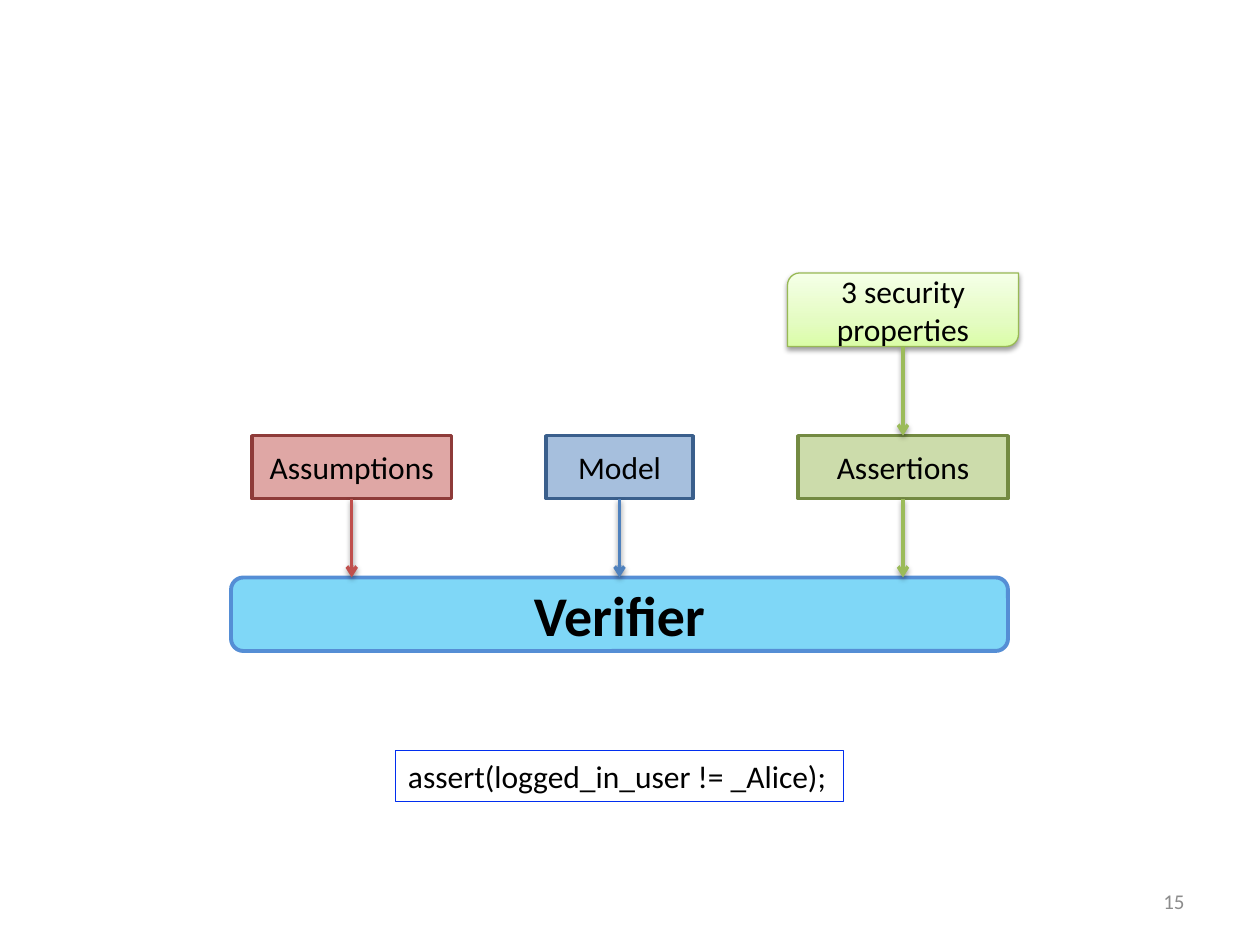
"""Build the verifier diagram slide: three inputs feeding one verifier."""
from lxml import etree
from pptx import Presentation
from pptx.dml import color
from pptx.enum import shapes, text
from pptx.oxml import ns
from pptx.util import Pt

INPUTS = [
    {"label": "Assumptions", "left": 144, "width": 114, "hue": "red"},
    {"label": "Model", "left": 312, "width": 84, "hue": "blue"},
    {"label": "Assertions", "left": 456, "width": 120, "hue": "green"},
]
VERIFIER = ("Verifier", (132, 330, 444, 42))
PROPERTIES = ("3 security properties", (450, 156, 132, 42))
ASSERTION = ("assert(logged_in_user != _Alice);", (226, 429, 256, 29))
PAGE_NUMBER = ("15", (516, 500.5, 168, 29))
INPUT_TOP, INPUT_HEIGHT = 249, 36

THEME = {
    "font": "Calibri", "ink": "000000", "muted": "8C8C8C",
    "body": 18, "big": 32, "small": 12,
    "fill": {"red": "C0504D", "blue": "4F81BD", "green": "9BBB59"},
    "edge": {"red": "8E3B39", "blue": "3A5F8C", "green": "738A42"},
    "verifier": "00B0F0", "verifier_edge": "558ED5",
    "properties": [(0, "DAFDA7"), (35, "E4FCC2"), (100, "F5FFE7")],
    "properties_edge": "98B955", "code_edge": "012EEF",
}


def rgb(value):
    return color.RGBColor.from_string(value)


def add_node(parent, tag, **attributes):
    node = etree.SubElement(parent, ns.qn(tag))
    for name, value in attributes.items():
        node.set(name, str(value))
    return node


def add_shadow(shape):
    effects = add_node(shape._element.spPr, "a:effectLst")
    shadow = add_node(effects, "a:outerShdw", blurRad=Pt(3.1), dist=Pt(1.6),
                      dir=90 * 60000, rotWithShape=0)
    add_node(add_node(shadow, "a:srgbClr", val="000000"), "a:alpha", val=38000)


def write(shape, words, size, ink=THEME["ink"], bold=False, align="CENTER", anchor="MIDDLE", wrap=True):
    frame = shape.text_frame
    frame.word_wrap = wrap
    frame.vertical_anchor = getattr(text.MSO_ANCHOR, anchor)
    para = frame.paragraphs[0]
    para.alignment = getattr(text.PP_ALIGN, align)
    span = para.add_run()
    span.text = words
    span.font.name, span.font.size, span.font.bold = THEME["font"], Pt(size), bold
    span.font.color.rgb = rgb(ink)


def add_box(page, kind, place, edge, weight, fill=None):
    box = page.shapes.add_shape(kind, *map(Pt, place))
    box.line.color.rgb = rgb(edge)
    box.line.width = Pt(weight)
    if fill:
        box.fill.solid()
        box.fill.fore_color.rgb = rgb(fill)
        tint = box._element.spPr.find(ns.qn("a:solidFill"))[0]
        add_node(tint, "a:alpha", val=50000)
    return box


def set_gradient(box, stops, angle):
    box.fill.gradient()
    gradient = box._element.spPr.find(ns.qn("a:gradFill"))
    for child in list(gradient):
        gradient.remove(child)
    stop_list = add_node(gradient, "a:gsLst")
    for position, tint in stops:
        stop = add_node(stop_list, "a:gs", pos=position * 1000)
        add_node(stop, "a:srgbClr", val=tint)
    add_node(gradient, "a:lin", ang=angle * 60000, scaled=0)


def add_arrow(page, x, top, bottom, tint):
    arrow = page.shapes.add_connector(shapes.MSO_CONNECTOR.STRAIGHT, Pt(x), Pt(top), Pt(x), Pt(bottom))
    arrow.line.color.rgb = rgb(tint)
    arrow.line.width = Pt(2)
    add_node(arrow.line._get_or_add_ln(), "a:tailEnd", type="arrow")
    add_shadow(arrow)
    return arrow


def main():
    deck = Presentation()
    deck.slide_width, deck.slide_height = Pt(720), Pt(540)
    page = deck.slides.add_slide(deck.slide_layouts[6])
    kinds = shapes.MSO_SHAPE

    words, place = PAGE_NUMBER
    number = page.shapes.add_textbox(*map(Pt, place))
    write(number, words, THEME["small"], THEME["muted"], align="RIGHT")

    words, place = VERIFIER
    verifier = add_box(page, kinds.ROUNDED_RECTANGLE, place, THEME["verifier_edge"], 2.25, THEME["verifier"])
    verifier.shadow.inherit = False
    write(verifier, words, THEME["big"], bold=True)
    verifier_top, verifier_middle = place[1], place[0] + place[2] / 2

    input_boxes = {}
    for item in INPUTS:
        hue, middle = item["hue"], item["left"] + item["width"] / 2
        place = (item["left"], INPUT_TOP, item["width"], INPUT_HEIGHT)
        box = add_box(page, kinds.RECTANGLE, place, THEME["edge"][hue], 2, THEME["fill"][hue])
        box.shadow.inherit = False
        write(box, item["label"], THEME["body"])
        input_boxes[item["label"]] = box
        arrow = add_arrow(page, middle, INPUT_TOP + INPUT_HEIGHT, verifier_top, THEME["fill"][hue])
        arrow.begin_connect(box, 2)
        if middle == verifier_middle:
            arrow.end_connect(verifier, 0)

    words, place = PROPERTIES
    properties = add_box(page, kinds.ROUND_2_DIAG_RECTANGLE, place, THEME["properties_edge"], 0.75)
    set_gradient(properties, THEME["properties"], 270)
    add_shadow(properties)
    write(properties, words, THEME["body"])
    left, top, width, height = place
    arrow = add_arrow(page, left + width / 2, top + height, INPUT_TOP, THEME["fill"]["green"])
    arrow.end_connect(input_boxes["Assertions"], 0)

    words, place = ASSERTION
    code = page.shapes.add_textbox(*map(Pt, place))
    code.line.color.rgb = rgb(THEME["code_edge"])
    code.line.width = Pt(0.75)
    write(code, words, THEME["body"], align="LEFT", anchor="TOP")

    deck.save("out.pptx")


if __name__ == "__main__":
    main()
